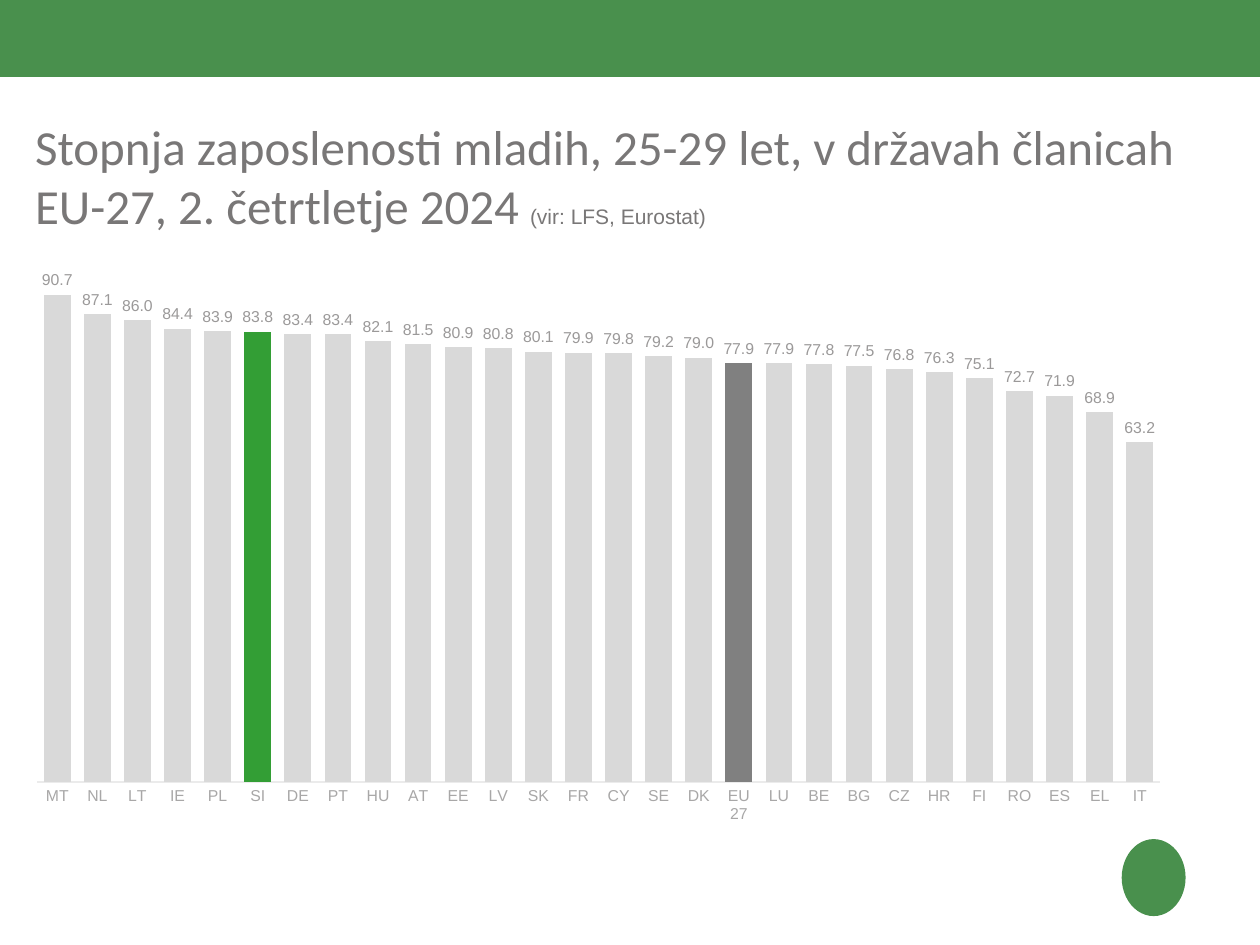
from lxml.etree import SubElement
from pptx import Presentation
from pptx.chart.data import CategoryChartData
from pptx.dml.color import RGBColor
from pptx.enum.chart import XL_CHART_TYPE, XL_LABEL_POSITION, XL_TICK_LABEL_POSITION, XL_TICK_MARK
from pptx.enum.shapes import MSO_SHAPE
from pptx.enum.text import MSO_ANCHOR
from pptx.oxml.ns import qn
from pptx.util import Pt

COLORS = {
    "brand": "49904D",
    "text": "797777",
    "axis": "A8A7A7",
    "label": "9B9999",
    "line": "EBEBEB",
    "bar": "D9D9D9",
    "home": "339E35",
    "union": "808080",
    "paper": "FFFFFF",
}
RATES = {
    "MT": 90.7, "NL": 87.1, "LT": 86.0, "IE": 84.4, "PL": 83.9, "SI": 83.8, "DE": 83.4,
    "PT": 83.4, "HU": 82.1, "AT": 81.5, "EE": 80.9, "LV": 80.8, "SK": 80.1, "FR": 79.9,
    "CY": 79.8, "SE": 79.2, "DK": 79.0, "EU 27": 77.9, "LU": 77.9, "BE": 77.8, "BG": 77.5,
    "CZ": 76.8, "HR": 76.3, "FI": 75.1, "RO": 72.7, "ES": 71.9, "EL": 68.9, "IT": 63.2,
}
MARKED = {"SI": "home", "EU 27": "union"}
FORMAT = "#,##0.0"


def color(name):
    return RGBColor.from_string(COLORS[name])


def paint(fill, name):
    fill.solid()
    fill.fore_color.rgb = color(name)


def style(font, size, name, face="Arial"):
    font.size = Pt(size)
    font.name = face
    font.color.rgb = color(name)


def write(para, text, size=12, name="text", face="Arial"):
    run = para.add_run()
    run.text = text
    style(run.font, size, name, face)


def add_block(slide, kind, box):
    shape = slide.shapes.add_shape(kind, *map(Pt, box))
    shape.shadow.inherit = False
    paint(shape.fill, "brand")
    shape.line.fill.background()


def add_title(slide, box):
    frame = slide.shapes.add_textbox(*map(Pt, box)).text_frame
    frame.word_wrap = True
    frame.vertical_anchor = MSO_ANCHOR.TOP
    frame.margin_left = frame.margin_top = frame.margin_right = frame.margin_bottom = 0
    para = frame.paragraphs[0]
    write(para, "Stopnja zaposlenosti mladih, 25-29 let, v državah članicah EU-27, 2. četrtletje 2024 ",
          size=28, face="Calibri")
    write(para, "(vir: LFS, Eurostat)")


def set_plot(chart, **sides):
    area = chart.plots[0]._element.getparent()
    layout = area.find(qn("c:layout"))
    if layout is None:
        layout = SubElement(area, qn("c:layout"))
        area.insert(0, layout)
    manual = SubElement(layout, qn("c:manualLayout"))
    parts = {"layoutTarget": "inner", "xMode": "edge", "yMode": "edge", **sides}
    for tag, value in parts.items():
        SubElement(manual, qn(f"c:{tag}")).set("val", str(value))


def set_axes(chart):
    base, scale = chart.category_axis, chart.value_axis
    for axis in (base, scale):
        axis.has_major_gridlines = False
        axis.major_tick_mark = axis.minor_tick_mark = XL_TICK_MARK.NONE
        style(axis.tick_labels.font, 9, "axis")
    base.format.line.width = Pt(1.5)
    paint(base.format.line.fill, "line")
    scale.minimum_scale = 0
    scale.maximum_scale = 100
    scale.tick_label_position = XL_TICK_LABEL_POSITION.NONE
    scale.format.line.fill.background()


def set_bars(plot):
    plot.gap_width = 50
    plot.overlap = -27
    plot.vary_by_categories = False
    bars = plot.series[0]
    bars.invert_if_negative = False
    paint(bars.format.fill, "bar")
    for place, land in enumerate(RATES):
        if land in MARKED:
            paint(bars.points[place].format.fill, MARKED[land])
    plot.has_data_labels = True
    labels = plot.data_labels
    labels.show_value = True
    labels.position = XL_LABEL_POSITION.OUTSIDE_END
    labels.number_format = FORMAT
    labels.number_format_is_linked = False
    style(labels.font, 9, "label")


def add_rates(slide, box):
    data = CategoryChartData(number_format=FORMAT)
    data.categories = list(RATES)
    data.add_series("Series 1", list(RATES.values()))
    chart = slide.shapes.add_chart(XL_CHART_TYPE.COLUMN_CLUSTERED, *map(Pt, box), data).chart
    chart.has_legend = False
    chart.has_title = False
    style(chart.font, 10, "text")
    set_plot(chart, x=0.002, y=0.017, w=0.998, h=0.889)
    set_axes(chart)
    set_bars(chart.plots[0])


def main():
    deck = Presentation()
    deck.slide_width, deck.slide_height = Pt(720), Pt(540)
    slide = deck.slides.add_slide(deck.slide_layouts[6])
    paint(slide.background.fill, "paper")
    add_block(slide, MSO_SHAPE.RECTANGLE, (0, -0.5, 720, 44.5))
    add_block(slide, MSO_SHAPE.OVAL, (641, 479.5, 36.5, 44))
    add_title(slide, (20, 66.5, 666.5, 51))
    add_rates(slide, (20, 134, 643.5, 345.5))
    deck.save("out.pptx")


if __name__ == "__main__":
    main()
